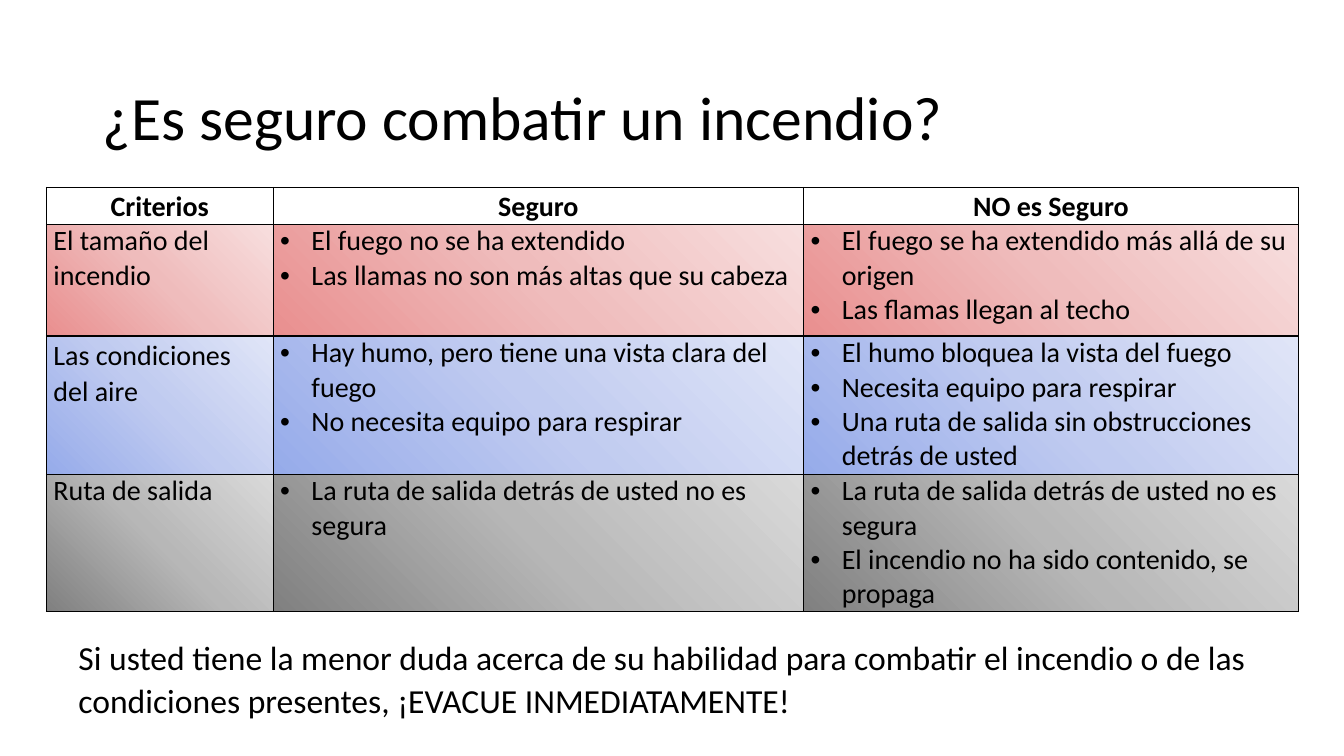
import pptx
import pptx.dml.color
import pptx.enum.text
import pptx.oxml
import pptx.oxml.ns
import pptx.util
from lxml import etree

Inches = pptx.util.Inches
Pt = pptx.util.Pt
RGBColor = pptx.dml.color.RGBColor
ALIGN = pptx.enum.text.PP_ALIGN
ANCHOR = pptx.enum.text.MSO_ANCHOR
qn = pptx.oxml.ns.qn

# Content
TITLE = "¿Es seguro combatir un incendio?"
HEADERS = ["Criterios", "Seguro", "NO es Seguro"]
CRITERIA = [
    ("El tamaño del incendio",
     ["El fuego no se ha extendido",
      "Las llamas no son más altas que su cabeza"],
     ["El fuego se ha extendido más allá de su origen",
      "Las flamas llegan al techo"]),
    ("Las condiciones del aire",
     ["Hay humo, pero tiene una vista clara del fuego",
      "No necesita equipo para respirar"],
     ["El humo bloquea la vista del fuego",
      "Necesita equipo para respirar",
      "Una ruta de salida sin obstrucciones detrás de usted"]),
    ("Ruta de salida",
     ["La ruta de salida detrás de usted no es segura"],
     ["La ruta de salida detrás de usted no es segura",
      "El incendio no ha sido contenido, se propaga"]),
]
WARNING = [
    "Si usted tiene la menor duda acerca de su habilidad para combatir el incendio o de las",
    "condiciones presentes, ¡EVACUE INMEDIATAMENTE!",
]

# Style
FONT = "Calibri"
BLACK = RGBColor(0x00, 0x00, 0x00)
WHITE = RGBColor(0xFF, 0xFF, 0xFF)
RED = [RGBColor(0xE9, 0x8F, 0x8F), RGBColor(0xEF, 0xBC, 0xBC), RGBColor(0xF7, 0xDE, 0xDE)]
BLUE = [RGBColor(0x96, 0xAB, 0xEA), RGBColor(0xC0, 0xCB, 0xF0), RGBColor(0xE0, 0xE5, 0xF7)]
GRAY = [RGBColor(0x80, 0x80, 0x80), RGBColor(0xB7, 0xB7, 0xB7), RGBColor(0xD9, 0xD9, 0xD9)]
ROW_GRADIENTS = [RED, BLUE, GRAY]
COLUMN_WIDTHS = [2.25, 5.26, 4.91]
ROW_HEIGHTS = [0.36, 1.11, 1.37, 1.36]
LOOSE = 1.07
BULLET_INDENT = Inches(0.31)


def write_lines(text_frame, lines, size, bold=False, align=ALIGN.LEFT, spacing=1.0, bullets=False):
    for index, line in enumerate(lines):
        paragraph = text_frame.add_paragraph() if index else text_frame.paragraphs[0]
        paragraph.alignment = align
        paragraph.line_spacing = spacing
        paragraph.space_before = paragraph.space_after = Pt(0)
        if bullets:
            properties = paragraph._p.get_or_add_pPr()
            properties.set("marL", str(BULLET_INDENT))
            properties.set("indent", str(-BULLET_INDENT))
            etree.SubElement(properties, qn("a:buFont"), typeface="Arial")
            etree.SubElement(properties, qn("a:buChar"), char="•")
        run = paragraph.add_run()
        run.text = line
        run.font.name = FONT
        run.font.size = Pt(size)
        run.font.bold = bold
        run.font.color.rgb = BLACK


def add_borders(cell):
    properties = cell._tc.get_or_add_tcPr()
    for side in ("a:lnL", "a:lnR", "a:lnT", "a:lnB"):
        line = etree.SubElement(properties, qn(side), w=str(Pt(1)))
        fill = etree.SubElement(line, qn("a:solidFill"))
        etree.SubElement(fill, qn("a:srgbClr"), val=str(BLACK))


def fill_gradient(cell, colors):
    gradient = etree.SubElement(cell._tc.get_or_add_tcPr(), qn("a:gradFill"), rotWithShape="1")
    stops = etree.SubElement(gradient, qn("a:gsLst"))
    for index, color in enumerate(colors):
        stop = etree.SubElement(stops, qn("a:gs"), pos=str(index * 50000))
        etree.SubElement(stop, qn("a:srgbClr"), val=str(color))
    etree.SubElement(gradient, qn("a:lin"), ang=str(315 * 60000), scaled="0")


def prepare_cell(cell):
    cell.margin_left = cell.margin_right = Inches(0.07)
    cell.margin_top = cell.margin_bottom = 0
    add_borders(cell)


presentation = pptx.Presentation()
presentation.slide_width = Inches(13.33)
presentation.slide_height = Inches(7.5)
slide = presentation.slides.add_slide(presentation.slide_layouts[5])

# Title
title = slide.shapes.title
title.left, title.top = Inches(0.92), Inches(0.4)
title.width, title.height = Inches(11.5), Inches(1.45)
title.text_frame.vertical_anchor = ANCHOR.MIDDLE
write_lines(title.text_frame, [TITLE], 44, spacing=LOOSE)
title.text_frame.paragraphs[0].space_after = Pt(8)

# Criteria table
table = slide.shapes.add_table(
    len(ROW_HEIGHTS), len(COLUMN_WIDTHS), Inches(0.46), Inches(1.86),
    Inches(sum(COLUMN_WIDTHS)), Inches(sum(ROW_HEIGHTS))).table
table.horz_banding = False
for column, width in zip(table.columns, COLUMN_WIDTHS):
    column.width = Inches(width)
for row, height in zip(table.rows, ROW_HEIGHTS):
    row.height = Inches(height)

for column_index, header in enumerate(HEADERS):
    cell = table.cell(0, column_index)
    prepare_cell(cell)
    cell.fill.solid()
    cell.fill.fore_color.rgb = WHITE
    write_lines(cell.text_frame, [header], 20, bold=True, align=ALIGN.CENTER, spacing=LOOSE)

for row_index, (criterion, safe, unsafe) in enumerate(CRITERIA, start=1):
    for column_index, lines in enumerate([[criterion], safe, unsafe]):
        cell = table.cell(row_index, column_index)
        prepare_cell(cell)
        fill_gradient(cell, ROW_GRADIENTS[row_index - 1])
        loose_cell = (row_index, column_index) == (2, 0)
        write_lines(cell.text_frame, lines, 20, spacing=LOOSE if loose_cell else 1.0,
                    bullets=column_index > 0)

# Warning below the table
warning = slide.shapes.add_textbox(Inches(0.68), Inches(6.24), Inches(11.96), Inches(0.95))
warning.text_frame.word_wrap = True
write_lines(warning.text_frame, WARNING, 24, spacing=LOOSE)

presentation.save("out.pptx")
